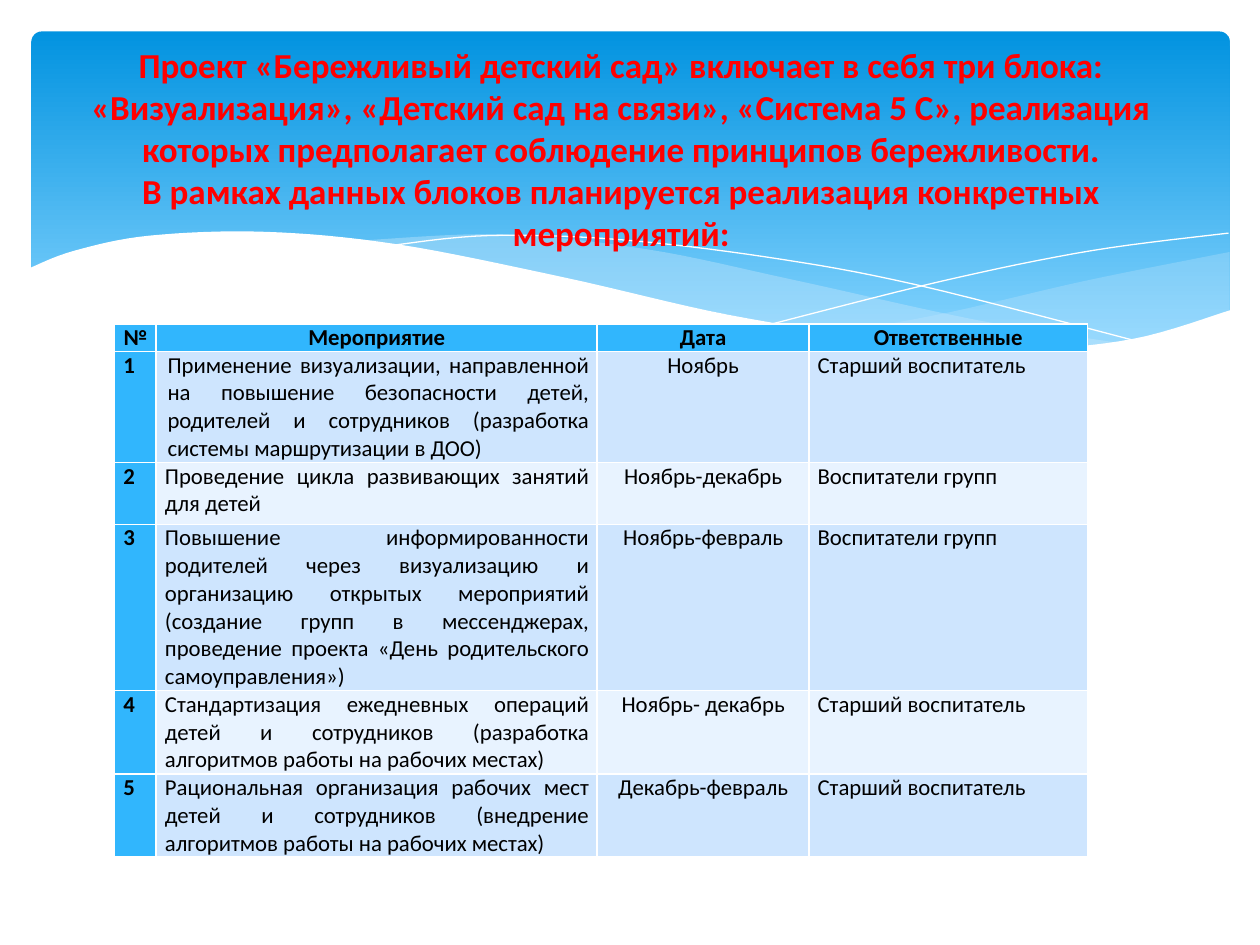
from dataclasses import dataclass
from typing import NamedTuple, Optional

from lxml import etree
from pptx import Presentation
from pptx import util as u
from pptx.dml.color import RGBColor
from pptx.enum import shapes, text
from pptx.oxml.ns import qn

FONT = "Calibri"
WHITE = RGBColor(0xFF, 0xFF, 0xFF)
BLACK = RGBColor(0x00, 0x00, 0x00)
RED = RGBColor(0xFF, 0x00, 0x00)
SKY_TOP = RGBColor(0x02, 0x93, 0xE0)
SKY_BOTTOM = RGBColor(0x83, 0xD3, 0xFE)
MIST = RGBColor(0xC6, 0xE7, 0xFC)
HEADER_BLUE = RGBColor(0x31, 0xB6, 0xFD)
BANDS = (RGBColor(0xCE, 0xE5, 0xFE), RGBColor(0xE8, 0xF3, 0xFF))

CENTER, JUSTIFY = text.PP_ALIGN.CENTER, text.PP_ALIGN.JUSTIFY
STEPS = 8
Point = tuple[float, float]


@dataclass
class Wave:
    """Smooth edges through knots in inches; without a fill, a white hairline."""
    edges: list[list[Point]]
    fill: Optional[RGBColor] = None
    opacity: int = 100


class Activity(NamedTuple):
    number: str
    name: str
    date: str
    responsible: str


WAVES = [
    Wave([[(9.76, 2), (8.61, 2.23), (7.53, 2.48), (6.61, 2.65)],
          [(6.61, 2.65), (7.45, 2.75), (8.2, 2.78), (8.97, 2.7), (9.76, 2.47)]],
         MIST, 29),
    Wave([[(8.93, 2.73), (7.75, 2.54), (6.29, 2.22), (5.14, 1.98), (3.99, 1.86),
           (2.86, 1.91)],
          [(2.86, 1.91), (3.83, 2.07), (5.3, 2.4), (6.65, 2.66), (7.73, 2.77),
           (8.93, 2.73)]], MIST, 40),
    Wave([[(3.09, 1.95), (3.87, 1.87), (4.89, 1.9), (6.08, 2.04), (7.27, 2.26),
           (9.07, 2.72)]]),
    Wave([[(6.13, 2.57), (7.48, 2.23), (8.66, 1.99), (9.75, 1.85)]]),
    Wave([[(9.77, 2.46), (8.99, 2.69), (8.09, 2.77), (7.08, 2.7), (5.79, 2.5),
           (4.47, 2.2), (3.16, 1.94), (2.11, 1.84), (1.19, 1.87), (0.59, 1.99),
           (0.23, 2.13)],
          [(0.23, 3.29), (9.77, 3.29)]], WHITE),
]

TITLE = (
    "Проект «Бережливый детский сад» включает в себя три блока: «Визуализация», "
    "«Детский сад на связи», «Система 5 С», реализация которых предполагает "
    "соблюдение принципов бережливости.\v"
    "В рамках данных блоков планируется реализация конкретных мероприятий:"
)

HEADER = Activity("№", "Мероприятие", "Дата", "Ответственные")
ACTIVITIES = [
    Activity("1", "Применение визуализации, направленной на повышение безопасности "
             "детей, родителей и сотрудников (разработка системы маршрутизации в ДОО)",
             "Ноябрь", "Старший воспитатель"),
    Activity("2", "Проведение цикла развивающих занятий для детей",
             "Ноябрь-декабрь", "Воспитатели групп"),
    Activity("3", "Повышение информированности родителей через визуализацию и "
             "организацию открытых мероприятий (создание групп в мессенджерах, "
             "проведение проекта «День родительского самоуправления»)",
             "Ноябрь-февраль", "Воспитатели групп"),
    Activity("4", "Стандартизация ежедневных операций детей и сотрудников "
             "(разработка алгоритмов работы на рабочих местах)",
             "Ноябрь- декабрь", "Старший воспитатель"),
    Activity("5", "Рациональная организация рабочих мест детей и сотрудников "
             "(внедрение алгоритмов работы на рабочих местах)",
             "Декабрь-февраль", "Старший воспитатель"),
]
COLUMN_WIDTHS = (0.33, 3.5, 1.68, 2.21)
ROW_HEIGHTS = (0.21, 0.84, 0.49, 1.05, 0.63, 0.63)


def set_all(target, values: dict) -> None:
    for name, value in values.items():
        setattr(target, name, value)


def set_font(font, size: int, color: RGBColor, bold: bool) -> None:
    set_all(font, {"name": FONT, "size": u.Pt(size), "bold": bold})
    font.color.rgb = color


def smooth_edge(knots: list[Point]) -> list[Point]:
    """Sample a Catmull-Rom spline through the knots, in EMU."""
    padded = [knots[0], *knots, knots[-1]]
    samples = [knots[0]]
    for before, start, end, after in zip(padded, padded[1:], padded[2:], padded[3:]):
        for step in range(1, STEPS + 1):
            t = step / STEPS
            samples.append(tuple(
                b + t / 2 * (c - a + t * (2 * a - 5 * b + 4 * c - d
                                          + t * (3 * (b - c) + d - a)))
                for a, b, c, d in zip(before, start, end, after)))
    return [(u.Inches(x), u.Inches(y)) for x, y in samples]


def draw_sky(slide) -> None:
    sky = slide.shapes.add_shape(
        shapes.MSO_SHAPE.ROUNDED_RECTANGLE,
        u.Inches(0.25), u.Inches(0.25), u.Inches(9.51), u.Inches(2.7))
    sky.adjustments[0] = 0.03
    sky.shadow.inherit = False
    sky.line.fill.background()
    sky.fill.gradient()
    sky.fill.gradient_angle = 270
    stops = sky.fill.gradient_stops
    for stop, position, color in zip(stops, (0, 0.9), (SKY_TOP, SKY_BOTTOM)):
        stop.position = position
        stop.color.rgb = color


def draw_wave(slide, wave: Wave) -> None:
    start, *rest = [point for edge in wave.edges for point in smooth_edge(edge)]
    filled = wave.fill is not None
    builder = slide.shapes.build_freeform(*start)
    builder.add_line_segments(rest, close=filled)
    curve = builder.convert_to_shape()
    curve.shadow.inherit = False
    if not filled:
        curve.fill.background()
        curve.line.color.rgb = WHITE
        curve.line.width = u.Pt(0)
        return
    curve.line.fill.background()
    curve.fill.solid()
    curve.fill.fore_color.rgb = wave.fill
    if wave.opacity < 100:
        color = curve.element.spPr.find(f"{qn('a:solidFill')}/{qn('a:srgbClr')}")
        etree.SubElement(color, qn("a:alpha"), val=str(wave.opacity * 1000))


def fill_cell(cell, words: str, fill: RGBColor, bold: bool, align) -> None:
    set_all(cell, {"margin_left": u.Inches(0.07), "margin_right": u.Inches(0.07),
                   "margin_top": 0, "margin_bottom": 0})
    cell.fill.solid()
    cell.fill.fore_color.rgb = fill
    paragraph = cell.text_frame.paragraphs[0]
    paragraph.alignment = align
    run = paragraph.add_run()
    run.text = words
    set_font(run.font, 13, BLACK, bold)


def draw_schedule(slide) -> None:
    """The default table style supplies the white rules between cells."""
    records = [HEADER, *ACTIVITIES]
    table = slide.shapes.add_table(
        len(records), len(COLUMN_WIDTHS), u.Inches(0.91), u.Inches(2.57),
        u.Inches(sum(COLUMN_WIDTHS)), u.Inches(sum(ROW_HEIGHTS))).table
    table.first_col = True
    for column, width in zip(table.columns, COLUMN_WIDTHS):
        column.width = u.Inches(width)
    for row, height in zip(table.rows, ROW_HEIGHTS):
        row.height = u.Inches(height)
    for r, record in enumerate(records):
        for c, words in enumerate(record):
            heading = r == 0 or c == 0
            fill = HEADER_BLUE if heading else BANDS[(r - 1) % 2]
            align = CENTER if r == 0 or c == 2 else JUSTIFY
            fill_cell(table.cell(r, c), words, fill, heading, align)
    first_name = table.cell(1, 1).text_frame.paragraphs[0]
    first_name._p.get_or_add_pPr().set("marL", str(u.Inches(0.02)))


def place_title(slide) -> None:
    title = slide.shapes.title
    set_all(title, {"left": u.Inches(0.43), "top": u.Inches(0.36),
                    "width": u.Inches(9), "height": u.Inches(1.97)})
    frame = title.text_frame
    frame.text = TITLE
    set_all(frame, {"word_wrap": True, "auto_size": text.MSO_AUTO_SIZE.NONE,
                    "vertical_anchor": text.MSO_ANCHOR.MIDDLE,
                    "margin_bottom": u.Inches(0.38)})
    paragraph = frame.paragraphs[0]
    paragraph.alignment = CENTER
    for run in paragraph.runs:
        set_font(run.font, 20, RED, True)
    slide.shapes.element.append(title.element)  # bring in front of the sky


def main() -> None:
    deck = Presentation()
    set_all(deck, {"slide_width": u.Inches(10), "slide_height": u.Inches(7.5)})
    slide = deck.slides.add_slide(deck.slide_layouts.get_by_name("Title Only"))
    draw_sky(slide)
    for wave in WAVES:
        draw_wave(slide, wave)
    draw_schedule(slide)
    place_title(slide)
    deck.save("out.pptx")


if __name__ == "__main__":
    main()
